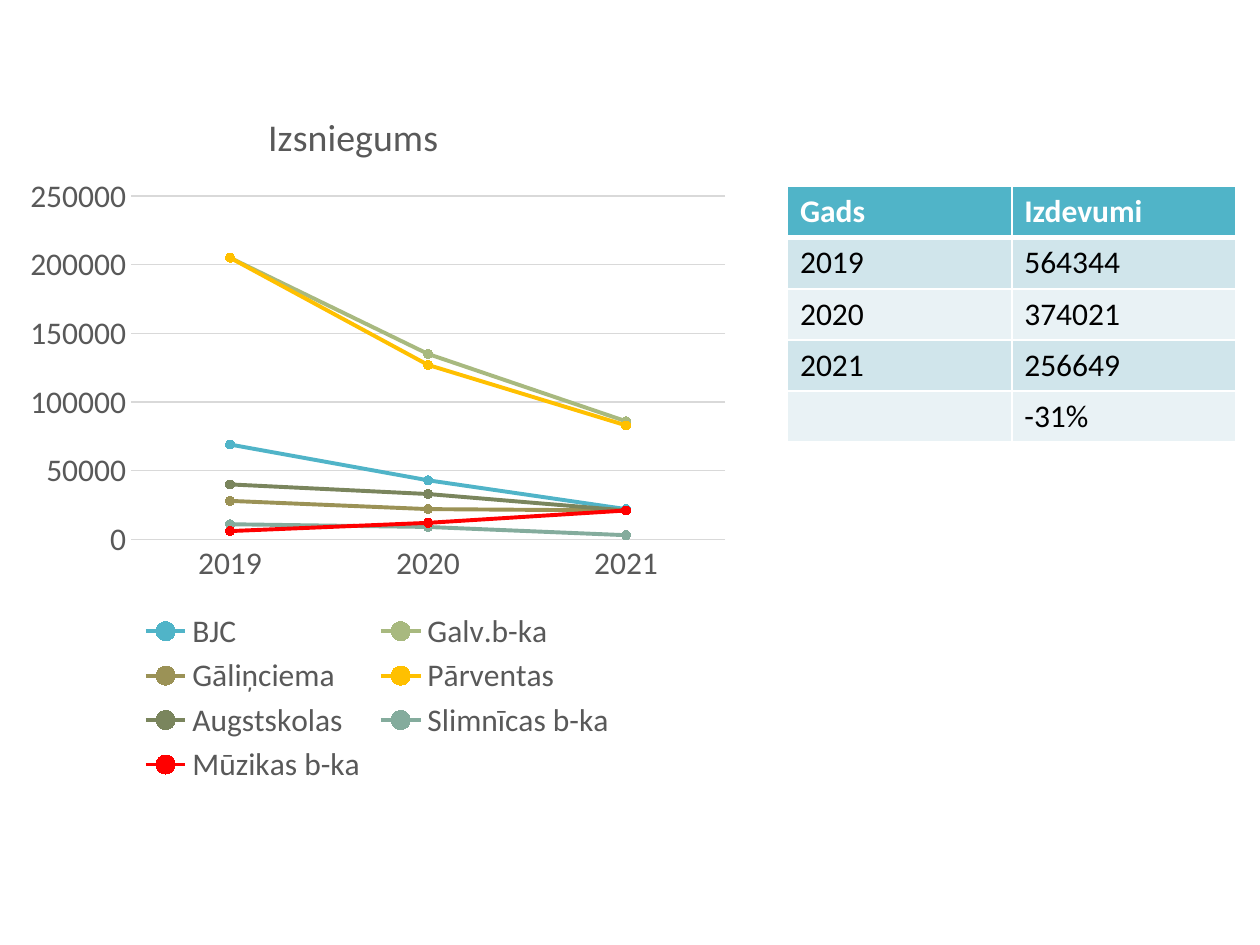
"""Build a slide with library loans by branch and a table of yearly totals."""
from lxml import etree
from pptx import Presentation
from pptx.chart.data import CategoryChartData
from pptx.dml.color import RGBColor
from pptx.enum import chart as ch
from pptx.oxml import parse_xml
from pptx.oxml.ns import nsdecls, qn
from pptx.util import Inches, Pt

WHITE = RGBColor(0xFF, 0xFF, 0xFF)
BLACK = RGBColor(0, 0, 0)
GREY = RGBColor(0x59, 0x59, 0x59)
GRID = RGBColor(0xD9, 0xD9, 0xD9)
TEAL = RGBColor(0x50, 0xB4, 0xC8)
BANDS = RGBColor(0xD0, 0xE5, 0xEB), RGBColor(0xE9, 0xF2, 0xF5)
FONT = "Calibri"

YEARS = ["2019", "2020", "2021"]
BRANCHES = [
    ("BJC", (69000, 43000, 22000), TEAL),
    ("Galv.b-ka", (205000, 135000, 86000), RGBColor(0xA8, 0xB9, 0x7F)),
    ("Gāliņciema", (28000, 22000, 21000), RGBColor(0x9B, 0x92, 0x56)),
    ("Pārventas", (205000, 127000, 83000), RGBColor(0xFF, 0xC0, 0x00)),
    ("Augstskolas", (40000, 33000, 21000), RGBColor(0x7A, 0x85, 0x5D)),
    ("Slimnīcas b-ka", (11000, 9000, 3000), RGBColor(0x84, 0xAC, 0x9D)),
    ("Mūzikas b-ka", (6000, 12000, 21000), RGBColor(0xFF, 0x00, 0x00)),
]
TOTALS = [
    ("Gads", "Izdevumi"),
    ("2019", "564344"),
    ("2020", "374021"),
    ("2021", "256649"),
    ("", "-31%"),
]


def style(font, color, size=18, bold=False):
    font.name, font.size, font.bold = FONT, Pt(size), bold
    font.color.rgb = color


def place(parent, inner=False, **fractions):
    for old in parent.findall(qn("c:layout")):
        parent.remove(old)
    layout = parse_xml(f"<c:layout {nsdecls('c')}><c:manualLayout/></c:layout>")
    settings = {"layoutTarget": "inner"} if inner else {}
    settings.update({f"{axis}Mode": "edge" for axis in "xy"})
    settings.update(fractions)
    for tag, value in settings.items():
        etree.SubElement(layout[0], qn(f"c:{tag}")).set("val", str(value))
    if inner:
        parent.insert(0, layout)
    else:
        parent.find(qn("c:tx")).addnext(layout)


def add_loans(slide):
    data = CategoryChartData()
    data.categories = YEARS
    for name, loans, _ in BRANCHES:
        data.add_series(name, loans)
    loans_chart = slide.shapes.add_chart(
        ch.XL_CHART_TYPE.LINE_MARKERS, Inches(0.12), Inches(0.59),
        Inches(5.75), Inches(5.68), data).chart
    style(loans_chart.font, BLACK)

    loans_chart.has_title = True
    heading = loans_chart.chart_title
    run = heading.text_frame.paragraphs[0].add_run()
    run.text = "Izsniegums"
    style(run.font, GREY, 21.6)
    heading.include_in_layout = False
    place(heading._element, x=0.34, y=0.04)

    loans_chart.has_legend = True
    legend = loans_chart.legend
    legend.position = ch.XL_LEGEND_POSITION.BOTTOM
    legend.include_in_layout = False
    style(legend.font, GREY)

    years, amounts = loans_chart.category_axis, loans_chart.value_axis
    for axis in (years, amounts):
        axis.major_tick_mark = axis.minor_tick_mark = ch.XL_TICK_MARK.NONE
        style(axis.tick_labels.font, GREY)
    amounts.minimum_scale, amounts.maximum_scale = 0, 250000
    amounts.major_unit = 50000
    amounts.format.line.fill.background()
    for line in (years.format.line, amounts.major_gridlines.format.line):
        line.color.rgb, line.width = GRID, Pt(0.75)

    plot = loans_chart.plots[0]
    plot.vary_by_categories = False
    place(plot._element.getparent(), inner=True, x=0.16, y=0.17, w=0.82, h=0.48)
    for series, (_, _, color) in zip(plot.series, BRANCHES):
        series.smooth = False
        series.format.line.color.rgb = color
        series.format.line.width = Pt(2.25)
        marker = series.marker
        marker.style, marker.size = ch.XL_MARKER_STYLE.CIRCLE, 5
        marker.format.fill.solid()
        marker.format.fill.fore_color.rgb = color
        marker.format.line.color.rgb = color


def set_borders(cell, top, bottom):
    properties = cell._tc.get_or_add_tcPr()
    widths = {"lnL": 1, "lnR": 1, "lnT": top, "lnB": bottom}
    for position, (side, width) in enumerate(widths.items()):
        properties.insert(position, parse_xml(
            f'<a:{side} {nsdecls("a")} w="{Pt(width)}"><a:solidFill>'
            f'<a:srgbClr val="{WHITE}"/></a:solidFill></a:{side}>'))


def add_totals(slide):
    table = slide.shapes.add_table(
        len(TOTALS), 2, Inches(6.25), Inches(1.48),
        Inches(3.56), Inches(2.03)).table
    for row, values in enumerate(TOTALS):
        header = row == 0
        for column, value in enumerate(values):
            cell = table.cell(row, column)
            cell.fill.solid()
            cell.fill.fore_color.rgb = TEAL if header else BANDS[(row - 1) % 2]
            set_borders(cell, 3 if row == 1 else 1, 3 if header else 1)
            paragraph = cell.text_frame.paragraphs[0]
            paragraph.font.size = Pt(18)
            if value:
                run = paragraph.add_run()
                run.text = value
                style(run.font, WHITE if header else BLACK, bold=header)


def main():
    deck = Presentation()
    deck.slide_width, deck.slide_height = Inches(10), Inches(7.5)
    slide = deck.slides.add_slide(deck.slide_layouts[6])
    add_totals(slide)
    add_loans(slide)
    deck.save("out.pptx")


if __name__ == "__main__":
    main()
